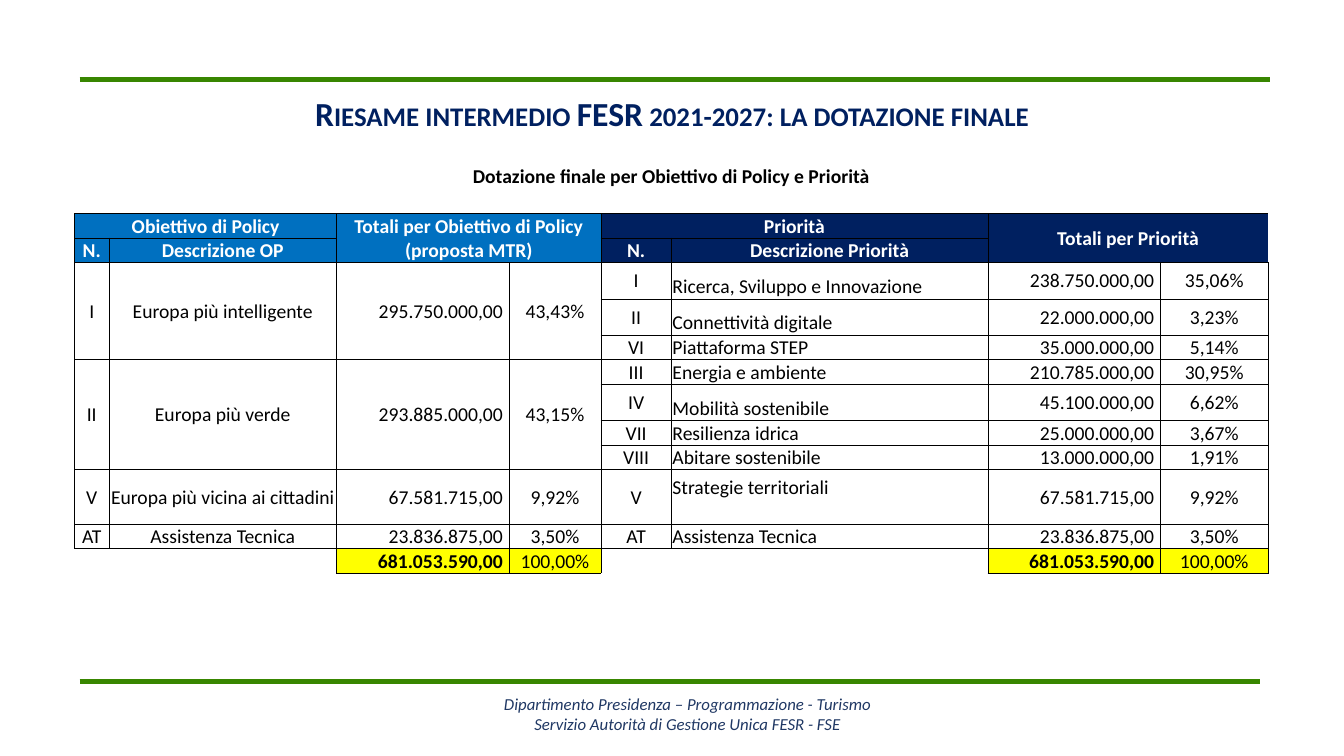
"""Build the slide on the final ERDF allocation by policy objective and priority."""
from dataclasses import dataclass, replace

from lxml import etree
from pptx import Presentation
from pptx.dml.color import RGBColor
from pptx.enum.shapes import MSO_CONNECTOR
from pptx.enum.text import MSO_ANCHOR, PP_ALIGN
from pptx.oxml.ns import qn
from pptx.util import Inches, Pt

STRAIGHT = MSO_CONNECTOR.STRAIGHT
LEFT, CENTER, RIGHT = PP_ALIGN.LEFT, PP_ALIGN.CENTER, PP_ALIGN.RIGHT
TOP, MIDDLE, BOTTOM = MSO_ANCHOR.TOP, MSO_ANCHOR.MIDDLE, MSO_ANCHOR.BOTTOM
FONT = "Calibri"
BLACK, WHITE, NAVY, BLUE = "000000", "FFFFFF", "002060", "0070C0"
GREEN, YELLOW, FOOTER_BLUE = "388600", "FFFF00", "203864"
TABLE_TEXT_SIZE = 14
TITLE = "Riesame intermedio FESR 2021-2027: la dotazione finale"
FOOTER = (
    "Dipartimento Presidenza – Programmazione - Turismo",
    "Servizio Autorità di Gestione Unica FESR - FSE",
)
COLUMN_WIDTHS = (0.34, 0.18, 2.08, 1.71, 0.91, 0.7, 1.22, 1.92, 1.71, 1.07)
ROW_HEIGHTS = (0.24,) * 4 + (0.36, 0.36, 0.24, 0.24, 0.36, 0.24, 0.24, 0.54, 0.24, 0.24)
FIRST_BODY_ROW, TOTAL_ROW = 4, 13
SIDES = {"L": (0, -1), "R": (0, 1), "T": (-1, 0), "B": (1, 0)}


@dataclass(frozen=True)
class Style:
    """Look of a table cell."""

    fill: str | None = None
    color: str = BLACK
    bold: bool = False
    align: PP_ALIGN = CENTER
    anchor: MSO_ANCHOR = MIDDLE
    right: float = 0.01
    bottom: float = 0
    bordered: bool = True


@dataclass(frozen=True)
class Entry:
    """Cell text with its place and span."""

    row: int
    column: int
    text: str = ""
    rows: int = 1
    columns: int = 1
    style: Style = Style()


@dataclass(frozen=True)
class Allocation:
    """Objective or priority with its amount and share."""

    number: str
    name: str
    amount: str
    share: str
    rows: int = 1


PLAIN = Style()
BLANK = Style(bordered=False)
CAPTION = Style(bold=True, anchor=BOTTOM, bordered=False)
BLUE_HEADER = Style(BLUE, WHITE, True)
NAVY_HEADER = Style(NAVY, WHITE, True)
AMOUNT = Style(align=RIGHT, right=0.06)
PRIORITY_NAME = Style(align=LEFT, anchor=BOTTOM)
RAISED_NAME = replace(PRIORITY_NAME, bottom=0.24)
TOTAL_AMOUNT = replace(AMOUNT, fill=YELLOW, bold=True)
TOTAL_SHARE = Style(YELLOW)
TOTAL = "681.053.590,00"

OBJECTIVES = (
    Allocation("I", "Europa più intelligente", "295.750.000,00", "43,43%", 3),
    Allocation("II", "Europa più verde", "293.885.000,00", "43,15%", 4),
    Allocation("V", "Europa più vicina ai cittadini", "67.581.715,00", "9,92%"),
    Allocation("AT", "Assistenza Tecnica", "23.836.875,00", "3,50%"),
)
PRIORITIES = (
    Allocation("I", "Ricerca, Sviluppo e Innovazione", "238.750.000,00", "35,06%"),
    Allocation("II", "Connettività digitale", "22.000.000,00", "3,23%"),
    Allocation("VI", "Piattaforma STEP", "35.000.000,00", "5,14%"),
    Allocation("III", "Energia e ambiente", "210.785.000,00", "30,95%"),
    Allocation("IV", "Mobilità sostenibile", "45.100.000,00", "6,62%"),
    Allocation("VII", "Resilienza idrica", "25.000.000,00", "3,67%"),
    Allocation("VIII", "Abitare sostenibile", "13.000.000,00", "1,91%"),
    Allocation("V", "Strategie territoriali", "67.581.715,00", "9,92%"),
    Allocation("AT", "Assistenza Tecnica", "23.836.875,00", "3,50%"),
)
HEADERS = (
    Entry(0, 0, "Dotazione finale per Obiettivo di Policy e Priorità", 1, 10, CAPTION),
    Entry(2, 0, "Obiettivo di Policy", 1, 3, BLUE_HEADER),
    Entry(2, 3, "Totali per Obiettivo di Policy (proposta MTR)", 2, 2, BLUE_HEADER),
    Entry(2, 5, "Priorità", 1, 3, NAVY_HEADER),
    Entry(2, 8, "Totali per Priorità", 2, 2, NAVY_HEADER),
    Entry(3, 0, "N.", 1, 1, BLUE_HEADER),
    Entry(3, 1, "Descrizione OP", 1, 2, BLUE_HEADER),
    Entry(3, 5, "N.", 1, 1, NAVY_HEADER),
    Entry(3, 6, "Descrizione Priorità", 1, 2, NAVY_HEADER),
)


def rgb(color: str) -> RGBColor:
    """Turn a hex string into a colour."""
    return RGBColor.from_string(color)


def add_text(paragraph, text: str, size: float, color: str, bold=False, italic=False):
    """Add one formatted run and return it."""
    run = paragraph.add_run()
    run.text = text
    run.font.name, run.font.size = FONT, Pt(size)
    run.font.bold, run.font.italic = bold, italic
    run.font.color.rgb = rgb(color)
    return run


def allocation_entries(allocations: tuple, column: int, name_style: Style) -> list[Entry]:
    """Lay out one half of the table body."""
    entries, row = [], FIRST_BODY_ROW
    for item in allocations:
        style = RAISED_NAME if item.name == "Strategie territoriali" else name_style
        entries += [
            Entry(row, column, item.number, item.rows),
            Entry(row, column + 1, item.name, item.rows, 2, style),
            Entry(row, column + 3, item.amount, item.rows, 1, AMOUNT),
            Entry(row, column + 4, item.share, item.rows),
        ]
        row += item.rows
    return entries


def table_entries() -> list[Entry]:
    """List every cell of the table."""
    entries = list(HEADERS)
    entries += [Entry(1, column, "", 1, 2, BLANK) for column in (0, 5)]
    entries += [Entry(1, column, style=BLANK) for column in (2, 3, 4, 7, 8, 9)]
    entries += allocation_entries(OBJECTIVES, 0, PLAIN)
    entries += allocation_entries(PRIORITIES, 5, PRIORITY_NAME)
    for column in (0, 5):
        entries += [
            Entry(TOTAL_ROW, column, style=BLANK),
            Entry(TOTAL_ROW, column + 1, "", 1, 2, BLANK),
            Entry(TOTAL_ROW, column + 3, TOTAL, style=TOTAL_AMOUNT),
            Entry(TOTAL_ROW, column + 4, "100,00%", style=TOTAL_SHARE),
        ]
    return entries


def set_border(cell, side: str, visible: bool) -> None:
    """Draw or clear one edge of a cell."""
    properties = cell._tc.get_or_add_tcPr()
    line = etree.SubElement(properties, qn(f"a:ln{side}"), w=str(Pt(0.5)))
    if visible:
        fill = etree.SubElement(line, qn("a:solidFill"))
        etree.SubElement(fill, qn("a:srgbClr"), val=BLACK)
    else:
        etree.SubElement(line, qn("a:noFill"))


def format_cell(cell, style: Style) -> None:
    """Set fill, insets and anchor of a cell."""
    if style.fill:
        cell.fill.solid()
        cell.fill.fore_color.rgb = rgb(style.fill)
    else:
        cell.fill.background()
    cell.margin_left = cell.margin_top = Inches(0.01)
    cell.margin_right, cell.margin_bottom = Inches(style.right), Inches(style.bottom)
    cell.vertical_anchor = style.anchor


def add_allocation_table(slide) -> None:
    """Add the table with its spans, borders and text."""
    frame = slide.shapes.add_table(
        len(ROW_HEIGHTS), len(COLUMN_WIDTHS), Inches(0.74), Inches(1.63),
        Inches(sum(COLUMN_WIDTHS)), Inches(sum(ROW_HEIGHTS)))
    table = frame.table
    table.first_row = table.horz_banding = False
    for column, width in zip(table.columns, COLUMN_WIDTHS):
        column.width = Inches(width)
    for row, height in zip(table.rows, ROW_HEIGHTS):
        row.height = Inches(height)
    entries = table_entries()
    owners = {
        (row, column): entry
        for entry in entries
        for row in range(entry.row, entry.row + entry.rows)
        for column in range(entry.column, entry.column + entry.columns)
    }
    for (row, column), entry in owners.items():
        cell = table.cell(row, column)
        for side, (down, across) in SIDES.items():
            neighbour = owners.get((row + down, column + across))
            bordered = entry.style.bordered or (neighbour and neighbour.style.bordered)
            set_border(cell, side, bool(neighbour != entry and bordered))
        format_cell(cell, entry.style)
        paragraph = cell.text_frame.paragraphs[0]
        paragraph.alignment = entry.style.align
        if entry.text and (row, column) == (entry.row, entry.column):
            add_text(paragraph, entry.text, TABLE_TEXT_SIZE, entry.style.color, entry.style.bold)
        else:
            etree.SubElement(paragraph._p, qn("a:endParaRPr"), sz=str(TABLE_TEXT_SIZE * 100))
    for entry in entries:
        if entry.rows * entry.columns > 1:
            last = table.cell(entry.row + entry.rows - 1, entry.column + entry.columns - 1)
            table.cell(entry.row, entry.column).merge(last)


def add_rule(slide, top: float, right: float) -> None:
    """Add a green horizontal line."""
    line = slide.shapes.add_connector(
        STRAIGHT, Inches(0.79), Inches(top), Inches(right), Inches(top))
    line.line.color.rgb = rgb(GREEN)
    line.line.width = Pt(3.25)
    etree.SubElement(line._element.spPr, qn("a:effectLst"))


def add_title(slide) -> None:
    """Fill and place the title in small capitals."""
    title = slide.shapes.title
    title.left, title.top = Inches(1.94), Inches(0.87)
    title.width, title.height = Inches(9.45), Inches(0.5)
    title.text_frame.word_wrap = True
    title.text_frame.vertical_anchor = TOP
    paragraph = title.text_frame.paragraphs[0]
    paragraph.alignment = CENTER
    run = add_text(paragraph, TITLE, 24, NAVY, bold=True)
    run.font._element.set("cap", "small")


def add_footer(slide) -> None:
    """Add the two centred footer lines."""
    box = slide.shapes.add_textbox(Inches(0.52), Inches(6.88), Inches(12.6), Inches(0.4))
    text_frame = box.text_frame
    text_frame.word_wrap = True
    text_frame.margin_top = text_frame.margin_bottom = 0
    text_frame.vertical_anchor = MIDDLE
    for index, text in enumerate(FOOTER):
        paragraph = text_frame.add_paragraph() if index else text_frame.paragraphs[0]
        paragraph.alignment = CENTER
        add_text(paragraph, text, 12, FOOTER_BLUE, italic=True)


def main() -> None:
    """Build and save the presentation."""
    presentation = Presentation()
    presentation.slide_width, presentation.slide_height = Inches(13.33), Inches(7.5)
    slide = presentation.slides.add_slide(presentation.slide_layouts[5])
    add_rule(slide, 0.79, 12.6)
    add_rule(slide, 6.76, 12.5)
    add_footer(slide)
    add_title(slide)
    add_allocation_table(slide)
    presentation.save("out.pptx")


if __name__ == "__main__":
    main()
